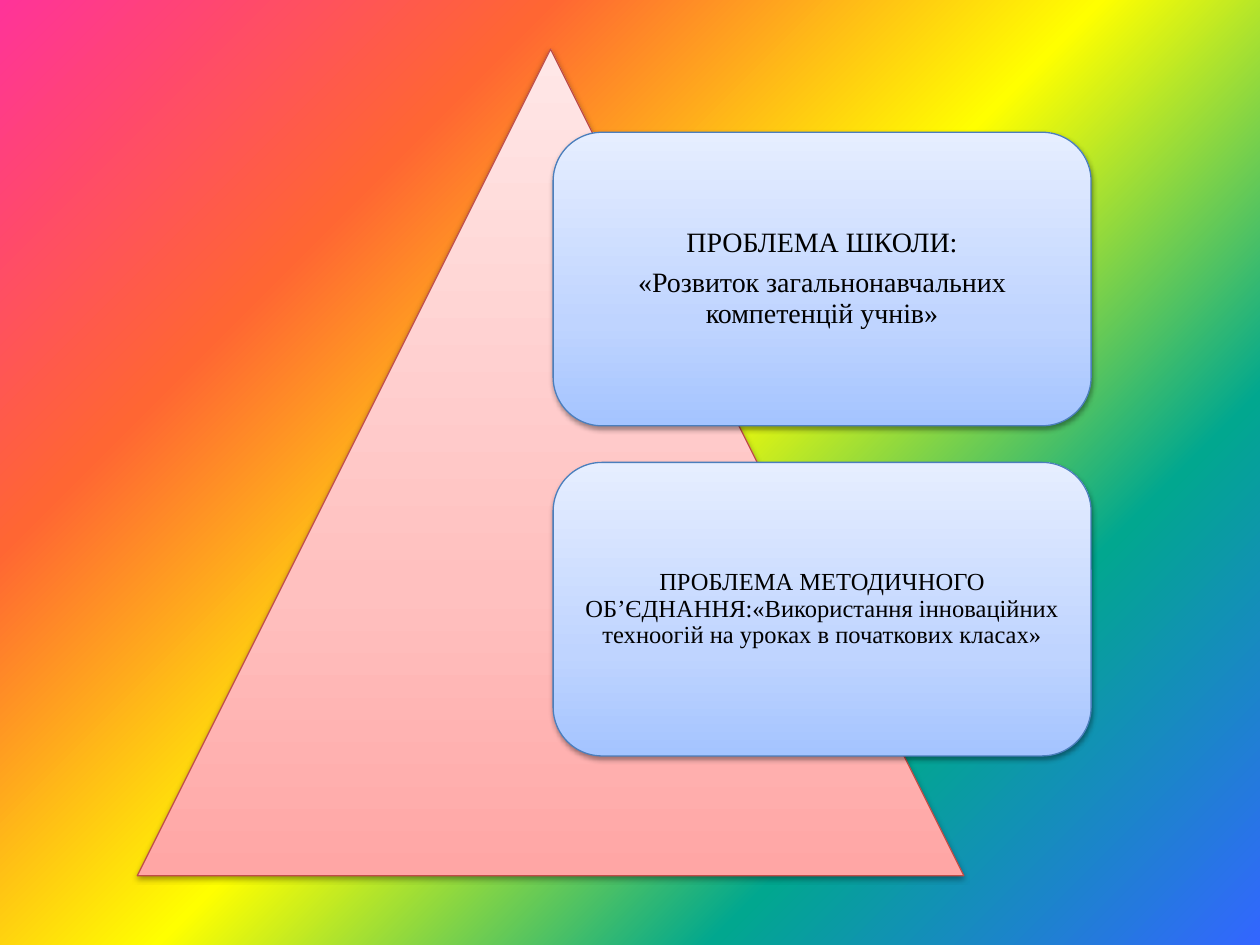
from lxml import etree
from pptx import Presentation
from pptx import util as u
from pptx.dml.color import RGBColor
from pptx.enum import shapes, text
from pptx.oxml.ns import qn

BLACK = RGBColor(0x00, 0x00, 0x00)
RED_LINE = RGBColor(0xBF, 0x4C, 0x48)
BLUE_LINE = RGBColor(0x4B, 0x7E, 0xBC)
RAINBOW = [(0, RGBColor(0xFF, 0x33, 0x99)), (25, RGBColor(0xFF, 0x66, 0x33)),
           (50, RGBColor(0xFF, 0xFF, 0x00)), (75, RGBColor(0x01, 0xA7, 0x8F)),
           (100, RGBColor(0x33, 0x66, 0xFF))]
PINKS = [(0, RGBColor(0xFF, 0xA6, 0xA5)), (35, RGBColor(0xFF, 0xC0, 0xBF)),
         (100, RGBColor(0xFF, 0xE7, 0xE7))]
BLUES = [(0, RGBColor(0xA4, 0xC4, 0xFF)), (35, RGBColor(0xBF, 0xD4, 0xFF)),
         (100, RGBColor(0xE6, 0xEE, 0xFF))]


def set_gradient(owner, fill, stops, angle):
    fill.gradient()
    fill.gradient_angle = angle
    gs_list = owner.find(".//" + qn("a:gsLst"))
    for gs in list(gs_list):
        gs_list.remove(gs)
    for pos, color in stops:
        gs = etree.SubElement(gs_list, qn("a:gs"), pos=str(pos * 1000))
        etree.SubElement(gs, qn("a:srgbClr"), val=str(color))


def add_panel(kind, left, top, width, height, stops, line):
    sp = s.shapes.add_shape(kind, u.Inches(left), u.Inches(top),
                            u.Inches(width), u.Inches(height))
    set_gradient(sp.element.spPr, sp.fill, stops, 90)
    sp.line.color.rgb = line
    sp.line.width = u.Pt(0.75)
    sp.shadow.inherit = False
    effects = sp.element.spPr.find(qn("a:effectLst"))
    shadow = etree.SubElement(effects, qn("a:outerShdw"), blurRad=str(u.Pt(3.1)),
                              dist=str(u.Pt(1.6)), dir="5400000", rotWithShape="0")
    color = etree.SubElement(shadow, qn("a:srgbClr"), val=str(BLACK))
    etree.SubElement(color, qn("a:alpha"), val="38000")
    return sp


prs = Presentation()
prs.slide_width, prs.slide_height = u.Inches(10), u.Inches(7.5)
s = prs.slides.add_slide(prs.slide_layouts[6])
set_gradient(s.element, s.background.fill, RAINBOW, 315)

add_panel(shapes.MSO_SHAPE.ISOSCELES_TRIANGLE, 1.09, 0.39, 6.56, 6.56, PINKS, RED_LINE)

problems = [
    (16, 0.07, ["ПРОБЛЕМА ШКОЛИ:", "«Розвиток загальнонавчальних компетенцій учнів»"]),
    (14, 0.06, ["ПРОБЛЕМА МЕТОДИЧНОГО ОБ’ЄДНАННЯ:«Використання інноваційних "
                "техноогій на уроках в початкових класах»"]),
]
for i, (size, margin, lines) in enumerate(problems):
    sp = add_panel(shapes.MSO_SHAPE.ROUNDED_RECTANGLE, 4.39, 1.05 + i * 2.62,
                   4.27, 2.33, BLUES, BLUE_LINE)
    tf = sp.text_frame
    tf.word_wrap = True
    tf.vertical_anchor = text.MSO_ANCHOR.MIDDLE
    tf.margin_left = tf.margin_right = u.Inches(margin)
    tf.margin_top = tf.margin_bottom = u.Inches(margin)
    tf.text = "\n".join(lines)
    for p in tf.paragraphs:
        p.alignment = text.PP_ALIGN.CENTER
        p.line_spacing = 0.9
        p.space_after = u.Pt(size * 0.35)
        p.font.name = "Times New Roman"
        p.font.size = u.Pt(size)
        p.font.color.rgb = BLACK

prs.save("out.pptx")
